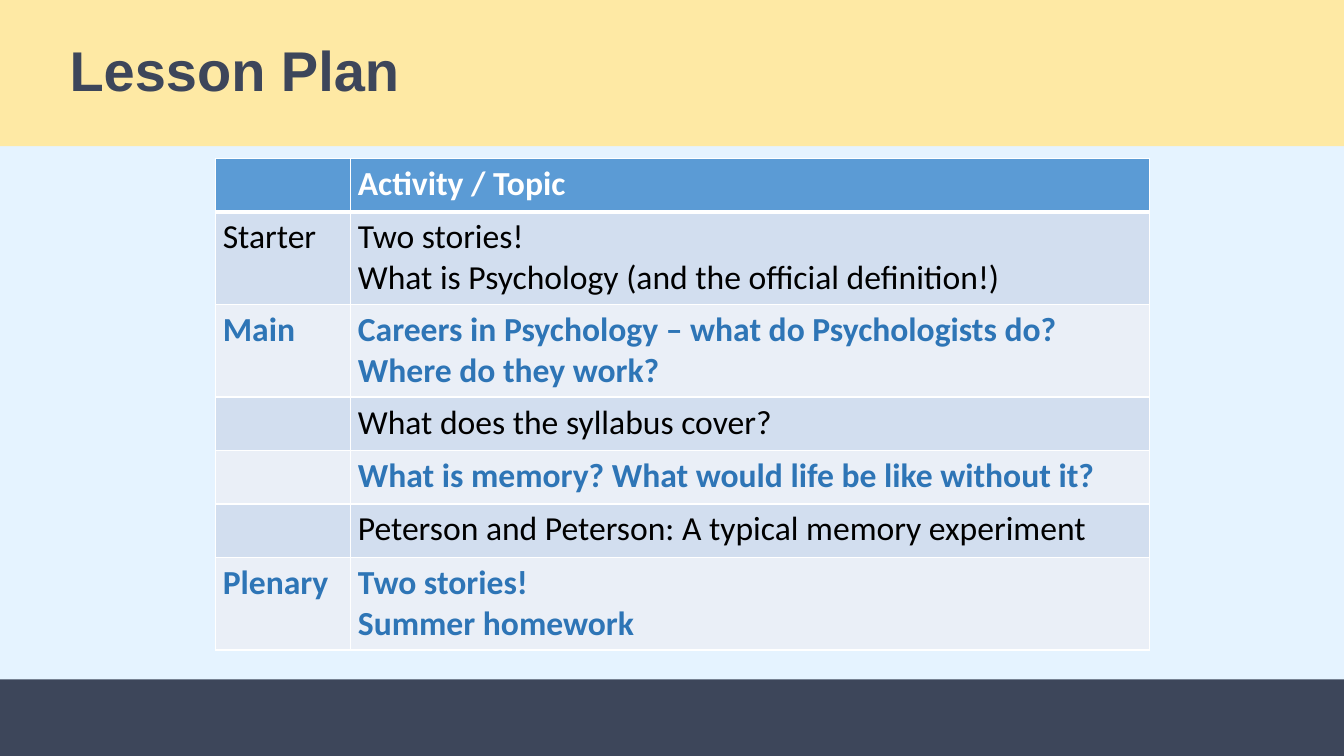
from lxml.etree import SubElement
from pptx import Presentation
from pptx.dml.color import RGBColor
from pptx.enum.shapes import MSO_SHAPE
from pptx.enum.text import MSO_ANCHOR, PP_ALIGN
from pptx.oxml.ns import qn
from pptx.util import Inches, Pt


def paint(fill, color):
    fill.solid()
    fill.fore_color.rgb = RGBColor.from_string(color)


def add_border(cell, side, points):
    line = SubElement(cell._tc.get_or_add_tcPr(), qn(f"a:ln{side}"), w=str(Pt(points)))
    line_fill = SubElement(line, qn("a:solidFill"))
    SubElement(line_fill, qn("a:srgbClr"), val="FFFFFF")


NAVY = "3D465A"
BLUE = "2E75B6"
HEADER_FILL = "5B9BD5"
BAND_FILLS = ["EAEFF7", "D2DEEF"]

presentation = Presentation()
presentation.slide_width = Inches(13.33)
presentation.slide_height = Inches(7.5)
slide = presentation.slides.add_slide(presentation.slide_layouts[6])
paint(slide.background.fill, "E5F3FF")

bands = []
for top, height, color in [(6.74, 0.76, NAVY), (0, 1.45, "FEE9A4")]:
    band = slide.shapes.add_shape(
        MSO_SHAPE.RECTANGLE, 0, Inches(top), presentation.slide_width, Inches(height))
    band.shadow.inherit = False
    band.line.fill.background()
    paint(band.fill, color)
    bands.append(band)

title_frame = bands[1].text_frame
title_frame.margin_left = Inches(0.69)
title_frame.vertical_anchor = MSO_ANCHOR.MIDDLE
paragraph = title_frame.paragraphs[0]
paragraph.alignment = PP_ALIGN.LEFT
paragraph.line_spacing = 0.9
run = paragraph.add_run()
run.text = "Lesson Plan"
run.font.name = "Arial"
run.font.size = Pt(40)
run.font.bold = True
run.font.color.rgb = RGBColor.from_string(NAVY)

lesson_rows = [
    ("", ["Activity / Topic"]),
    ("Starter", ["Two stories!", "What is Psychology (and the official definition!)"]),
    ("Main", ["Careers in Psychology – what do Psychologists do? Where do they work?"]),
    ("", ["What does the syllabus cover?"]),
    ("", ["What is memory? What would life be like without it?"]),
    ("", ["Peterson and Peterson: A typical memory experiment"]),
    ("Plenary", ["Two stories!", "Summer homework"]),
]
row_heights = [0.53, 0.92, 0.92, 0.53, 0.53, 0.53, 0.92]
column_widths = [1.34, 7.92]

table = slide.shapes.add_table(
    len(lesson_rows), len(column_widths), Inches(2.14), Inches(1.57),
    Inches(sum(column_widths)), Inches(sum(row_heights))).table
for column, width in zip(table.columns, column_widths):
    column.width = Inches(width)

for row_index, (stage, activities) in enumerate(lesson_rows):
    table.rows[row_index].height = Inches(row_heights[row_index])
    is_header = row_index == 0
    is_striped = row_index % 2 == 1
    fill_color = HEADER_FILL if is_header else BAND_FILLS[row_index % 2]
    text_color = "FFFFFF" if is_header else "000000" if is_striped else BLUE
    for column_index, lines in enumerate([[stage], activities]):
        cell = table.cell(row_index, column_index)
        cell.margin_left = cell.margin_right = Inches(0.07)
        cell.margin_top = cell.margin_bottom = Inches(0.05)
        for side in "LRTB":
            header_edge = (row_index, side) in [(0, "B"), (1, "T")]
            add_border(cell, side, 3 if header_edge else 1)
        paint(cell.fill, fill_color)
        for line_index, text in enumerate(lines):
            if not text:
                continue
            frame = cell.text_frame
            paragraph = frame.add_paragraph() if line_index else frame.paragraphs[0]
            run = paragraph.add_run()
            run.text = text
            run.font.name = "Calibri"
            run.font.size = Pt(24)
            run.font.bold = not is_striped
            run.font.color.rgb = RGBColor.from_string(text_color)

presentation.save("out.pptx")
